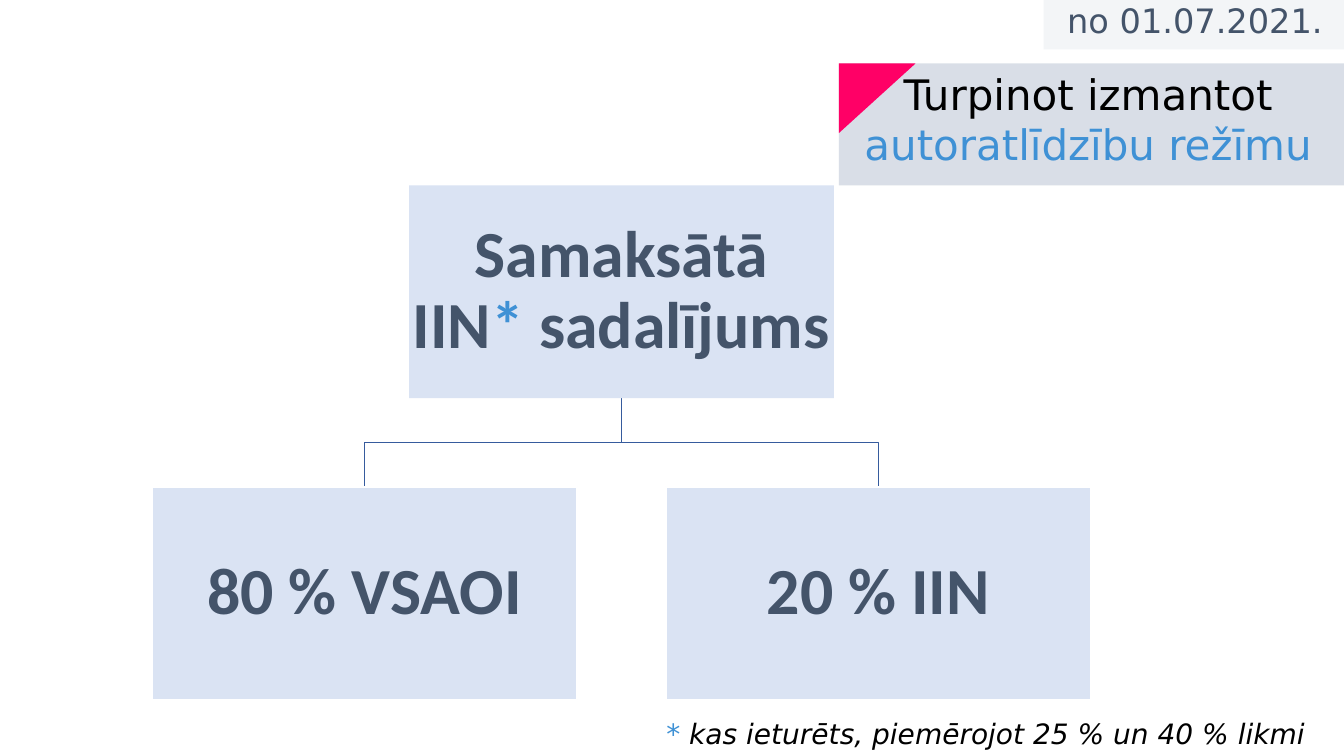
from collections import namedtuple
from dataclasses import dataclass

from pptx import Presentation
from pptx.dml.color import RGBColor
from pptx.enum.shapes import MSO_SHAPE as Shape
from pptx.enum.text import MSO_ANCHOR as Anchor, MSO_AUTO_SIZE as AutoSize, PP_ALIGN as Align
from pptx.oxml.xmlchemy import OxmlElement
from pptx.util import Inches, Pt

Box = namedtuple("Box", "left top width height")


@dataclass(frozen=True)
class Theme:
    heading_font: str = "DejaVu Sans"
    node_font: str = "Calibri"
    slate: str = "44546A"
    blue: str = "3F91D5"
    black: str = "000000"
    white: str = "FFFFFF"
    grey: str = "D6DCE5"
    node_fill: str = "DAE3F3"
    branch: str = "365B9D"
    accent: str = "FF0066"
    date_size: int = 24
    title_size: int = 30
    node_size: int = 47
    note_size: int = 20


THEME = Theme()


def emu(box):
    return [Inches(length) for length in box]


def paint(shape, color, alpha=None):
    """Solid fill, with opacity in percent when given."""
    shape.fill.solid()
    shape.fill.fore_color.rgb = RGBColor.from_string(color)
    if alpha is not None:
        opacity = OxmlElement("a:alpha")
        opacity.set("val", str(alpha * 1000))
        shape.fill._xPr.find(".//{*}srgbClr").append(opacity)


def add_block(slide, kind, box, color, alpha=None):
    shape = slide.shapes.add_shape(kind, *emu(box))
    shape.shadow.inherit = False
    shape.line.fill.background()
    paint(shape, color, alpha)
    return shape


def set_frame(frame, insets, anchor=Anchor.TOP):
    frame.word_wrap = True
    frame.auto_size = AutoSize.NONE
    frame.vertical_anchor = anchor
    (frame.margin_left, frame.margin_top,
     frame.margin_right, frame.margin_bottom) = emu(insets)


def write(para, parts, font, size, align=Align.LEFT, spacing=1.0, bold=False):
    """Fill a paragraph with (text, colour) spans."""
    para.alignment = align
    para.line_spacing = spacing
    for text, color in parts:
        span = para.add_run()
        span.text = text
        span.font.name, span.font.size, span.font.bold = font, Pt(size), bold
        span.font.color.rgb = RGBColor.from_string(color)


def add_date(slide, box):
    tag = add_block(slide, Shape.RECTANGLE, box, THEME.grey, 28)
    set_frame(tag.text_frame, (0.1, 0.04, 0.21, 0.04))
    write(tag.text_frame.paragraphs[0], [("no 01.07.2021.", THEME.slate)],
          THEME.heading_font, THEME.date_size, Align.RIGHT, 0.9)


def add_title(slide, box):
    title = slide.shapes.title
    title.left, title.top, title.width, title.height = emu(box)
    paint(title, THEME.grey, 92)
    frame = title.text_frame
    set_frame(frame, (0.1, 0.05, 0.16, 0.05))
    lines = [("Turpinot izmantot", THEME.black), ("autoratlīdzību režīmu", THEME.blue)]
    for index, line in enumerate(lines):
        para = frame.add_paragraph() if index else frame.paragraphs[0]
        write(para, [line], THEME.heading_font, THEME.title_size, Align.CENTER)

    # Corner mark: a right triangle turned into the top left corner
    width, height = 0.76, 0.69
    shift = (width - height) / 2
    corner = add_block(slide, Shape.ISOSCELES_TRIANGLE,
                       Box(box.left + shift, box.top - shift, height, width), THEME.accent)
    corner.adjustments[0] = 0
    corner.rotation = 90


def add_node(slide, box, parts):
    node = add_block(slide, Shape.RECTANGLE, box, THEME.node_fill)
    set_frame(node.text_frame, (0.03,) * 4, Anchor.MIDDLE)
    write(node.text_frame.paragraphs[0], parts, THEME.node_font, THEME.node_size,
          Align.CENTER, 0.9, bold=True)
    return node


def add_branch(slide, parent, child):
    """Stepped line from the parent's bottom to the child's top."""
    start_x = parent.left + parent.width / 2
    start_y = parent.top + parent.height
    end_x = child.left + child.width / 2
    middle_y = (start_y + child.top) / 2
    points = [(start_x, middle_y), (end_x, middle_y), (end_x, child.top)]
    builder = slide.shapes.build_freeform(Inches(start_x), Inches(start_y))
    builder.add_line_segments([(Inches(x), Inches(y)) for x, y in points], close=False)
    branch = builder.convert_to_shape()
    branch.shadow.inherit = False
    branch.fill.background()
    branch.line.color.rgb = RGBColor.from_string(THEME.branch)
    branch.line.width = Pt(1)


def add_tree(slide, box):
    gap = 0.88
    width, height = (box.width - gap) / 2, (box.height - gap) / 2
    root = Box(box.left + (box.width - width) / 2, box.top, width, height)
    labels = ["80 % VSAOI", "20 % IIN"]
    leaves = [Box(box.left + column * (width + gap), box.top + height + gap, width, height)
              for column in range(len(labels))]
    for leaf in leaves:
        add_branch(slide, root, leaf)
    add_node(slide, root, [("Samaksātā IIN", THEME.slate), ("*", THEME.blue),
                           (" sadalījums", THEME.slate)])
    for leaf, label in zip(leaves, labels):
        node = add_node(slide, leaf, [(label, THEME.slate)])
        node.line.color.rgb = RGBColor.from_string(THEME.white)
        node.line.width = Pt(1)


def add_note(slide, box):
    frame = slide.shapes.add_textbox(*emu(box)).text_frame
    set_frame(frame, (0.1, 0.05, 0.1, 0.05))
    para = frame.paragraphs[0]
    write(para, [("* ", THEME.blue),
                 ("kas ieturēts, piemērojot 25 % un 40 % likmi", THEME.black)],
          THEME.heading_font, THEME.note_size)
    para.runs[1].font.italic = True


def main():
    deck = Presentation()
    deck.slide_width, deck.slide_height = Inches(13.33), Inches(7.5)
    slide = deck.slides.add_slide(deck.slide_layouts.get_by_name("Title Only"))
    add_date(slide, Box(10.35, 0, 2.98, 0.49))
    add_tree(slide, Box(1.51, 1.84, 9.31, 5.1))
    add_note(slide, Box(6.51, 7.06, 6.82, 0.44))
    add_title(slide, Box(8.32, 0.63, 5.01, 1.21))
    deck.save("out.pptx")


if __name__ == "__main__":
    main()
